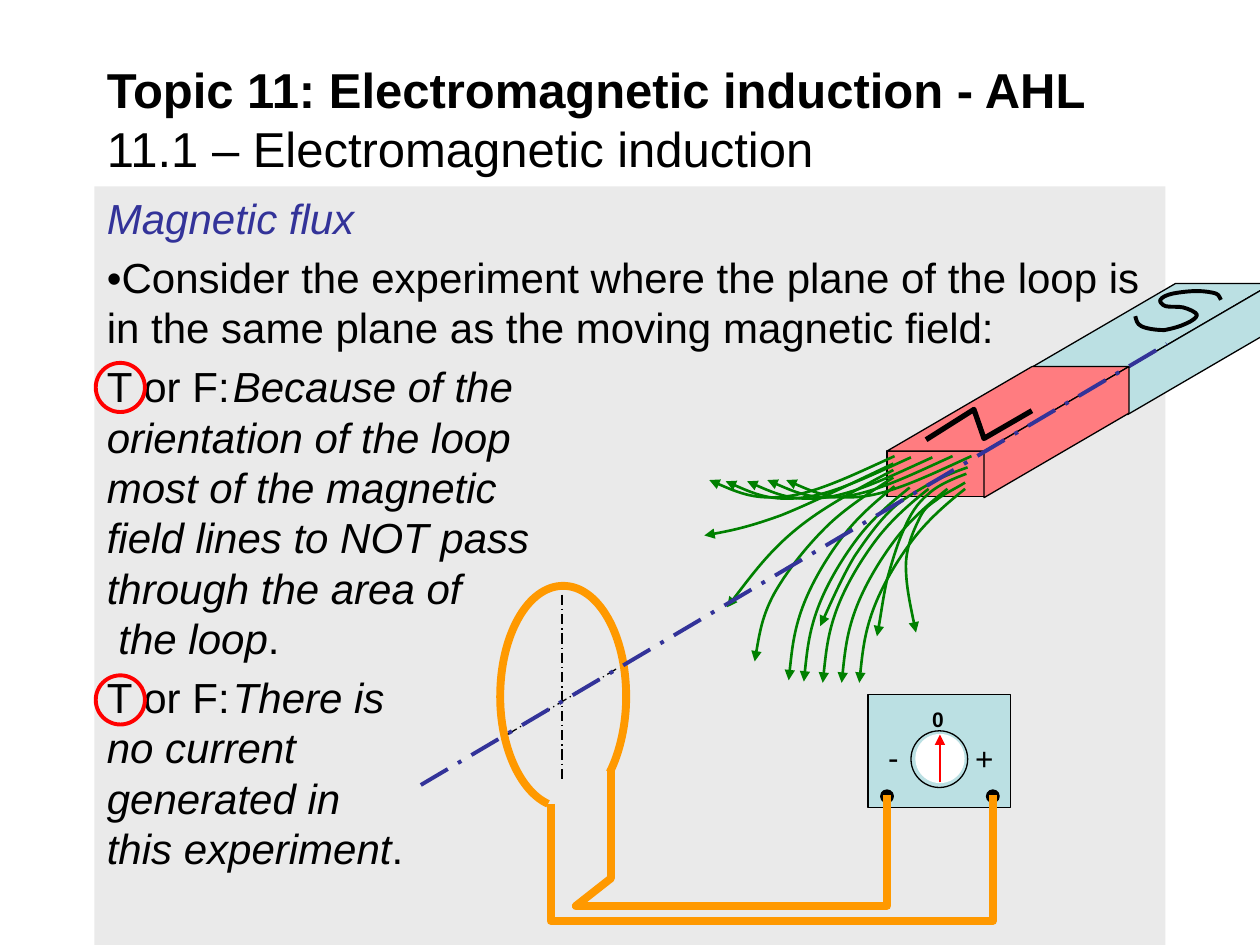
from dataclasses import dataclass
from itertools import accumulate
from typing import Optional

from lxml.etree import SubElement
from pptx import Presentation
from pptx.dml.color import RGBColor
from pptx.enum.dml import MSO_LINE
from pptx.enum.shapes import MSO_CONNECTOR, MSO_SHAPE
from pptx.enum.text import MSO_ANCHOR, PP_ALIGN
from pptx.oxml.ns import qn
from pptx.util import Pt

EMU_PER_PX = 9144  # 100 px to the inch
BLACK, WHITE, RED = "000000", "FFFFFF", "FF0000"
PALE_BLUE, PINK = "BBE0E3", "FF7C80"
GREEN, ORANGE, INDIGO = "008000", "FF9900", "333399"

Point = tuple[int, int]


@dataclass
class Stroke:
    color: str = BLACK
    width: float = 0.75
    dashed: bool = False
    arrow: bool = False


@dataclass
class Run:
    text: str
    format: dict


@dataclass
class Block:
    """One end of the bar magnet: the front face's corner and the colour."""
    left: int
    top: int
    color: str


@dataclass
class FieldLines:
    """Equal field lines: where each starts, and the curve from there."""
    starts: list[Point]
    steps: list[Point]


def px(length: int) -> int:
    return length * EMU_PER_PX


def rgb(color: str) -> RGBColor:
    return RGBColor.from_string(color)


def paint_line(line, stroke: Stroke) -> None:
    line.color.rgb = rgb(stroke.color)
    line.width = Pt(stroke.width)
    if stroke.dashed:
        line.dash_style = MSO_LINE.LONG_DASH_DOT
    if stroke.arrow:
        SubElement(line._get_or_add_ln(), qn("a:tailEnd"), type="triangle")


def paint(shape, fill: Optional[str], stroke: Optional[Stroke]) -> None:
    shape.shadow.inherit = False
    if fill:
        shape.fill.solid()
        shape.fill.fore_color.rgb = rgb(fill)
    else:
        shape.fill.background()
    if stroke:
        paint_line(shape.line, stroke)
    else:
        shape.line.fill.background()


def add_preset(kind, box: tuple, fill: Optional[str], stroke: Optional[Stroke]):
    shape = slide.shapes.add_shape(kind, *map(px, box))
    paint(shape, fill, stroke)
    return shape


def add_outline(points: list[Point], stroke: Stroke, fill: Optional[str] = None,
                closed: bool = False):
    builder = slide.shapes.build_freeform(*points[0], scale=EMU_PER_PX)
    builder.add_line_segments(points[1:], close=closed)
    shape = builder.convert_to_shape()
    paint(shape, fill, stroke)
    return shape


def add_curve(points: list[Point], stroke: Stroke) -> None:
    """Start point, then two control points and an end point per segment."""
    shape = add_outline(points, stroke)
    segments = list(shape._element.iter(qn("a:lnTo")))
    for first in range(0, len(segments), 3):
        group = segments[first:first + 3]
        group[0].tag = qn("a:cubicBezTo")
        for segment in group[1:]:
            group[0].append(segment[0])
            segment.getparent().remove(segment)


def add_line(start: Point, end: Point, stroke: Stroke) -> None:
    line = slide.shapes.add_connector(MSO_CONNECTOR.STRAIGHT, *map(px, start + end))
    paint_line(line.line, stroke)
    SubElement(line._element.spPr, qn("a:effectLst"))


def add_runs(paragraph, runs: list[Run]) -> None:
    paragraph.alignment = PP_ALIGN.LEFT
    for item in runs:
        for index, text in enumerate(item.text.split("\n")):
            if index:
                paragraph.add_line_break()
            run = paragraph.add_run()
            run.text = text
            values = {"name": "Arial", "size": Pt(24), "italic": False} | item.format
            run.font.color.rgb = rgb(values.pop("color", BLACK))
            for name, value in values.items():
                setattr(run.font, name, value)


def add_text(box: tuple, runs: list[Run]):
    frame = slide.shapes.add_textbox(*map(px, box)).text_frame
    frame.word_wrap = True
    add_runs(frame.paragraphs[0], runs)
    return frame


def add_block(block: Block) -> None:
    left, top, right, bottom = block.left, block.top, block.left + 77, block.top + 37
    rise, run = -67, 115
    add_preset(MSO_SHAPE.RECTANGLE, (left, top, 78, 36), block.color, Stroke())
    add_outline([(left, top), (left + run, top + rise), (right + run, top + rise),
                 (right, top)], Stroke(), block.color, closed=True)
    add_outline([(right, bottom), (right, top), (right + run, top + rise),
                 (right + run, bottom + rise)], Stroke(), block.color, closed=True)


presentation = Presentation()
presentation.slide_width, presentation.slide_height = px(1000), px(750)
slide = presentation.slides.add_slide(presentation.slide_layouts[6])

# Body text on its grey panel
italic = {"italic": True}
paragraphs = [
    [Run("Magnetic flux", {"italic": True, "color": INDIGO})],
    [Run("•Consider the experiment where the plane of the loop is in the same "
         "plane as the moving magnetic field:", {})],
    [Run("T or F:\t", {}),
     Run("Because of the\norientation of the loop\nmost of the magnetic\n"
         "field lines to NOT pass\nthrough the area of\n the loop", italic),
     Run(".", {})],
    [Run("T or F:\t", {}),
     Run("There is\nno current\ngenerated in\nthis experiment", italic),
     Run(".", {})],
]
panel = add_preset(MSO_SHAPE.RECTANGLE, (75, 148, 850, 602), "EAEAEA", None)
body = panel.text_frame
body.word_wrap, body.vertical_anchor = True, MSO_ANCHOR.TOP
for index, runs in enumerate(paragraphs):
    paragraph = body.add_paragraph() if index else body.paragraphs[0]
    paragraph.space_before = Pt(4.8)
    add_runs(paragraph, runs)

# Bar magnet with its pole letters
for block in (Block(818, 292, PALE_BLUE), Block(704, 358, PINK)):
    add_block(block)
add_outline([(735, 349), (773, 325), (781, 348), (819, 326)], Stroke(width=3))
add_curve([(969, 238), (968, 237), (968, 234), (965, 233), (962, 232), (956, 231),
           (950, 231), (944, 231), (936, 232), (931, 233), (926, 234), (922, 236),
           (921, 238), (920, 239), (922, 242), (925, 243), (928, 244), (935, 243),
           (939, 244), (943, 245), (950, 248), (950, 250), (950, 252), (946, 255),
           (941, 257), (937, 259), (930, 261), (924, 262), (918, 262), (910, 261),
           (906, 259), (902, 257), (902, 254), (901, 251)], Stroke(width=2.25))

# Field lines; each step is measured from the point before it
field_lines = [
    FieldLines([(709, 379)], [(-19, 12), (-20, 13), (-15, 15), (-16, 16), (-15, 19),
                              (-10, 18), (-9, 17), (-3, 18), (-3, 18)]),
    FieldLines([(710, 386), (722, 387), (737, 388), (752, 388), (766, 388)],
               [(-15, 12), (-15, 13), (-12, 16), (-12, 16), (-12, 20), (-7, 19),
                (-7, 19), (-2, 20), (-2, 19)]),
    FieldLines([(709, 373)], [(-28, 15), (-27, 14), (-22, 18), (-22, 18), (-16, 22),
                              (-17, 22)]),
    FieldLines([(709, 368)], [(-32, 15), (-32, 16), (-25, 10), (-25, 9), (-18, 4),
                              (-18, 3)]),
    FieldLines([(710, 362), (723, 363), (740, 363), (756, 362), (771, 362)],
               [(-31, 14), (-30, 15), (-25, 3), (-25, 3), (-18, -8), (-18, -8)]),
    FieldLines([(766, 383)], [(-8, 5), (-9, 4), (-6, 5), (-7, 5), (-3, 2), (-4, 9),
                              (-4, 8), (-6, 14), (0, 14), (0, 15), (4, 19), (4, 19)]),
    FieldLines([(767, 376)], [(-5, 2), (-17, 6), (-8, 8), (-9, 7), (-6, 10), (-5, 12),
                              (-5, 11), (-4, 14), (-4, 14), (-3, 14), (-3, 22), (-2, 9)]),
    FieldLines([(768, 371)], [(-6, 2), (-16, 6), (-10, 6), (-10, 6), (-10, 5), (-10, 10),
                              (-9, 9), (-9, 12), (-10, 15), (-9, 15), (-13, 29), (-5, 11)]),
]
for family in field_lines:
    for start in family.starts:
        points = accumulate([start] + family.steps,
                            lambda a, b: (a[0] + b[0], a[1] + b[1]))
        add_curve(list(points), Stroke(GREEN, 1.5, arrow=True))

# Wire loop
wire = Stroke(ORANGE, 4.5)
add_curve([(435, 638), (413, 628), (397, 593), (397, 553), (397, 504), (419, 465),
           (447, 465), (475, 465), (497, 504), (497, 553), (497, 575), (492, 597),
           (484, 613)], wire)

# Meter
add_preset(MSO_SHAPE.RECTANGLE, (689, 551, 113, 90), PALE_BLUE, Stroke())
add_preset(MSO_SHAPE.OVAL, (723, 580, 45, 45), None, Stroke())
add_text((695, 581, 31, 40), [Run("-", {"size": Pt(18)})])
add_text((730, 556, 42, 30), [Run("0", {"size": Pt(12), "bold": True})])
add_text((764, 582, 31, 40), [Run("+", {"size": Pt(18)})])
for left in (699, 783):
    add_preset(MSO_SHAPE.OVAL, (left, 627, 10, 10), BLACK, Stroke())
add_preset(MSO_SHAPE.OVAL, (727, 583, 38, 38), WHITE, Stroke(WHITE))
add_line((746, 621), (746, 583), Stroke(RED, 1.5, arrow=True))

# Leads and axes
add_outline([(437, 638), (437, 731), (788, 731), (788, 631)], wire)
add_line((489, 531), (401, 584), Stroke(dashed=True))
add_line((446, 472), (446, 621), Stroke(dashed=True))
add_outline([(485, 610), (485, 697), (457, 719), (704, 719), (704, 631)], wire)
add_line((334, 623), (926, 273), Stroke(INDIGO, 2.25, dashed=True))

# Rings round the right answers
for top in (288, 536):
    add_preset(MSO_SHAPE.OVAL, (76, top, 39, 39), None, Stroke(RED, 2.25))

# Title
title = add_text((75, 45, 850, 98), [
    Run("Topic 11: Electromagnetic induction - AHL\n", {"size": Pt(28), "bold": True}),
    Run("11.1 – Electromagnetic induction", {"size": Pt(28)}),
])
title.vertical_anchor = MSO_ANCHOR.MIDDLE

presentation.save("out.pptx")
